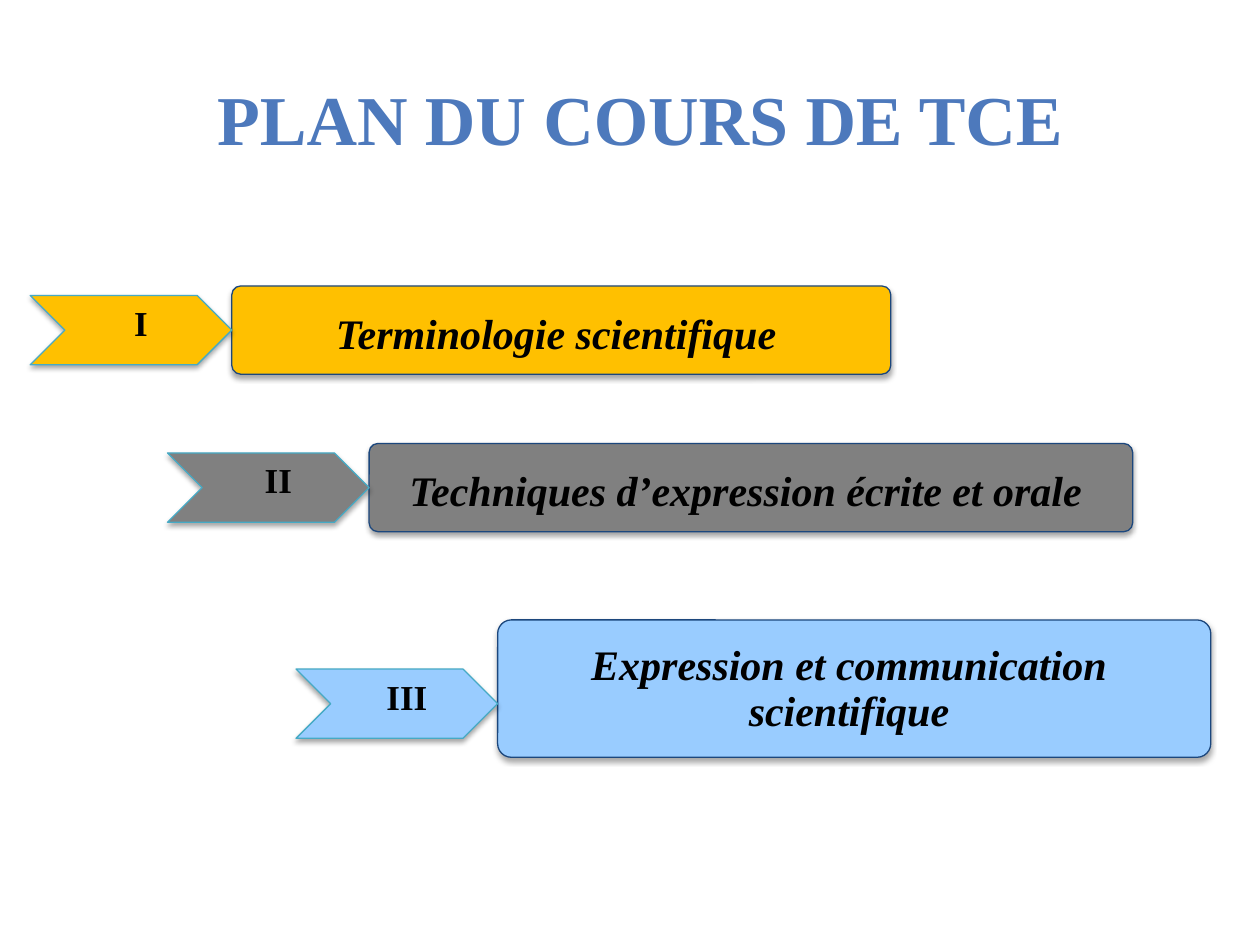
from lxml.etree import SubElement
from pptx import Presentation
from pptx.dml.color import RGBColor
from pptx.enum.shapes import MSO_SHAPE
from pptx.enum.text import MSO_ANCHOR, PP_ALIGN
from pptx.oxml.ns import qn
from pptx.util import Inches, Pt

# Content; lengths are cells of a 100 x 75 grid over the slide
TITLE = "PLAN DU COURS DE TCE"
TITLE_BOX = (9.4, 5.5, 82.8, 7.7)
CHAPTERS = [
    dict(number="I", label="Terminologie scientifique", fill="FFC000",
         bar=(18.4, 22.7, 52.3, 7), marker_drop=0, text_drop=0.9),
    dict(number="II", label="Techniques d’expression écrite et orale", fill="808080",
         bar=(29.3, 35.2, 60.6, 7), marker_drop=0, text_drop=0.9),
    dict(number="III", label="Expression et communication scientifique", fill="99CCFF",
         bar=(39.5, 49.2, 56.6, 10.9), marker_drop=1.2, text_drop=0.2),
]
MARKER_W, MARKER_H = 16, 5.5


class Theme:
    font = "Times New Roman"
    title, ink = "4D79BC", "000000"
    bar_line, marker_line = "1C477D", "46AAC5"
    title_size, label_size, number_size = 40, 24, 20
    line_width = 0.75
    line_spacing = 0.9


prs = Presentation()
prs.slide_width, prs.slide_height = Inches(10), Inches(7.5)
CELL = prs.slide_width / 100
s = prs.slides.add_slide(prs.slide_layouts[6])


def cells(*values):
    return [round(v * CELL) for v in values]


def write(shape, text, size, color, italic=False, spacing=None):
    tf = shape.text_frame
    tf.word_wrap = True
    p = tf.paragraphs[0]
    p.alignment = PP_ALIGN.CENTER
    p.line_spacing = spacing
    r = p.add_run()
    r.text = text
    r.font.name, r.font.size = Theme.font, Pt(size)
    r.font.bold, r.font.italic = True, italic
    r.font.color.rgb = RGBColor.from_string(color)


def set_insets(shape, left, top, right, bottom):
    tf = shape.text_frame
    tf.vertical_anchor = MSO_ANCHOR.MIDDLE
    tf.margin_left, tf.margin_top, tf.margin_right, tf.margin_bottom = cells(
        left, top, right, bottom)


def add_shadow(shape):
    shape.shadow.inherit = False
    effects = shape._element.spPr.find(qn("a:effectLst"))
    shadow = SubElement(effects, qn("a:outerShdw"), blurRad=str(Pt(3.1)),
                        dist=str(Pt(1.8)), dir="5400000", rotWithShape="0")
    black = SubElement(shadow, qn("a:srgbClr"), val="000000")
    SubElement(black, qn("a:alpha"), val="35000")


def add_block(kind, box, fill, line, adjustment):
    sp = s.shapes.add_shape(kind, *cells(*box))
    sp.adjustments[0] = adjustment
    sp.fill.solid()
    sp.fill.fore_color.rgb = RGBColor.from_string(fill)
    sp.line.color.rgb = RGBColor.from_string(line)
    sp.line.width = Pt(Theme.line_width)
    add_shadow(sp)
    return sp


# Title
write(s.shapes.add_textbox(*cells(*TITLE_BOX)), TITLE, Theme.title_size, Theme.title)

# Chapters: a label bar, with a numbered chevron touching its left edge
for chapter in CHAPTERS:
    left, top, width, height = chapter["bar"]
    bar = add_block(MSO_SHAPE.ROUNDED_RECTANGLE, chapter["bar"], chapter["fill"],
                    Theme.bar_line, 0.1)
    set_insets(bar, 1, chapter["text_drop"], 1.8, 0)
    write(bar, chapter["label"], Theme.label_size, Theme.ink, True, Theme.line_spacing)

    marker_top = top + (height - MARKER_H) / 2 + chapter["marker_drop"]
    marker = add_block(MSO_SHAPE.CHEVRON, (left - MARKER_W, marker_top, MARKER_W, MARKER_H),
                       chapter["fill"], Theme.marker_line, 0.5)
    set_insets(marker, 1.6, 0, 0, 0.8)
    write(marker, chapter["number"], Theme.number_size, Theme.ink,
          spacing=Theme.line_spacing)

prs.save("out.pptx")
